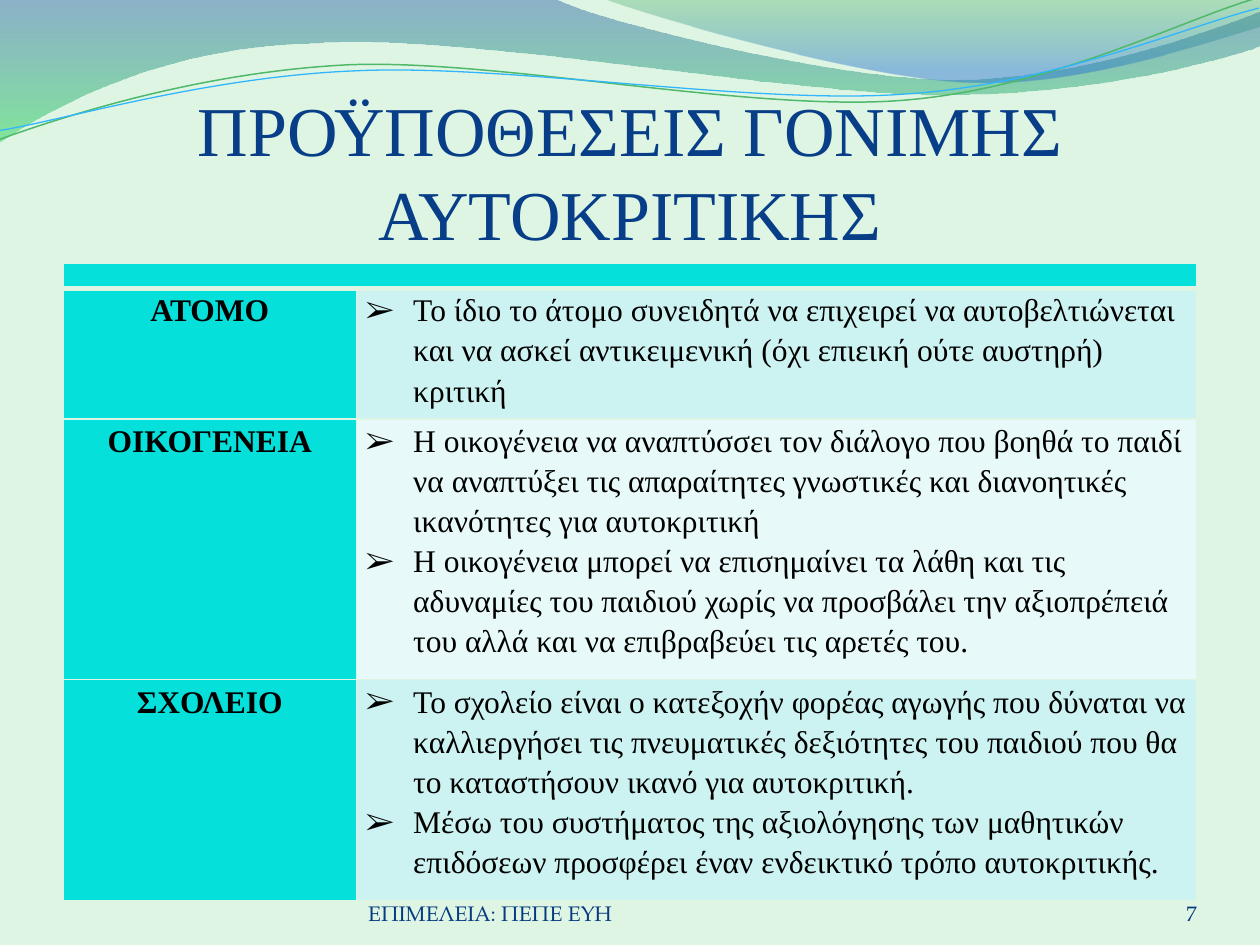
"""Build the slide on the conditions for fruitful self-criticism."""
from lxml.etree import SubElement
from pptx import Presentation
from pptx.dml.color import RGBColor
from pptx.enum.text import MSO_ANCHOR, PP_ALIGN
from pptx.oxml import parse_xml
from pptx.oxml.ns import nsdecls, qn
from pptx.util import Inches, Pt

MINT = RGBColor(0xDE, 0xF5, 0xE4)
TURQUOISE = RGBColor(0x05, 0xE0, 0xDB)
AQUA = RGBColor(0xCC, 0xF3, 0xF1)
PALE_AQUA = RGBColor(0xE7, 0xF9, 0xF8)
BLACK = RGBColor(0, 0, 0)
TITLE_BLUE = RGBColor(0x07, 0x3E, 0x87)
FOOTER_BLUE = RGBColor(0x07, 0x3B, 0x81)
DEEP_BLUE = RGBColor(0x29, 0x60, 0xA7)
BRIGHT_GREEN = RGBColor(0x35, 0xDA, 0x5E)
LEAF_GREEN = RGBColor(0x36, 0xA7, 0x52)
CLEAR_BLUE = RGBColor(0x24, 0x72, 0xD3)
LINE_GREEN = RGBColor(0x50, 0xB8, 0x6A)
LINE_BLUE = RGBColor(0x31, 0xB6, 0xFD)

SERIF = "Times New Roman"
FOOTER_FONT = "TeX Gyre Pagella"
TITLE = "ΠΡΟΫΠΟΘΕΣΕΙΣ ΓΟΝΙΜΗΣ ΑΥΤΟΚΡΙΤΙΚΗΣ"
FOOTER = "ΕΠΙΜΕΛΕΙΑ: ΠΕΠΕ ΕΥΗ"
PAGE_NUMBER = "7"

CONDITIONS = [
    ("ΑΤΟΜΟ", 0.96, [
        "Το ίδιο το άτομο συνειδητά να επιχειρεί να αυτοβελτιώνεται και να ασκεί "
        "αντικειμενική (όχι επιεική ούτε αυστηρή) κριτική",
    ]),
    ("ΟΙΚΟΓΕΝΕΙΑ", 1.95, [
        "Η οικογένεια να αναπτύσσει τον διάλογο που βοηθά το παιδί να αναπτύξει "
        "τις απαραίτητες γνωστικές και διανοητικές ικανότητες για αυτοκριτική",
        "Η οικογένεια μπορεί να επισημαίνει τα λάθη και τις αδυναμίες του παιδιού "
        "χωρίς να προσβάλει την αξιοπρέπειά του αλλά και να επιβραβεύει τις αρετές του.",
    ]),
    ("ΣΧΟΛΕΙΟ", 1.75, [
        "Το σχολείο είναι ο κατεξοχήν φορέας αγωγής που δύναται να καλλιεργήσει τις "
        "πνευματικές δεξιότητες του παιδιού που θα το καταστήσουν ικανό για αυτοκριτική.",
        "Μέσω του συστήματος της αξιολόγησης των μαθητικών επιδόσεων προσφέρει "
        "έναν ενδεικτικό τρόπο αυτοκριτικής.",
    ]),
]
HEADER_HEIGHT = 0.2
COLUMN_WIDTHS = (2.33, 6.67)

WAVES = [
    ((0, 0), [
        [(4.4, -0.01)],
        [(4.76, 0.17), (6.64, 0.63), (7.58, 0.63)],
        [(8.53, 0.63), (9.58, 0.26), (10, 0.09)],
        [(10.01, 0.36)],
        [(9.83, 0.44), (8.7, 0.76), (7.46, 0.75)],
        [(6.22, 0.75), (3.82, 0.28), (2.57, 0.34)],
        [(1.29, 0.36), (0.46, 0.83), (-0.01, 1.13)],
    ], [(0, DEEP_BLUE, 45), (1, BRIGHT_GREEN, 55)]),
    ((4.79, -0.01), [
        [(5.09, 0.11), (6.82, 0.62), (7.69, 0.65)],
        [(8.56, 0.69), (9.61, 0.32), (10, 0.21)],
        [(10, 0)],
    ], [(0, LEAF_GREEN, 30), (0.8, CLEAR_BLUE, 45)]),
]
RIBBONS = [
    ((-0.02, 0.87), [
        [(0.47, 0.72), (1.58, 0.41), (2.78, 0.41)],
        [(3.96, 0.42), (5.91, 0.93), (7.12, 0.9)],
        [(8.32, 0.87), (9.4, 0.36), (10, 0.22)],
    ], LINE_GREEN, 0.85),
    ((-0.02, 0.8), [
        [(0.46, 0.75), (1.64, 0.45), (2.83, 0.46)],
        [(4.03, 0.46), (5.96, 0.88), (7.16, 0.85)],
        [(8.35, 0.83), (9.42, 0.42), (10.01, 0.3)],
    ], LINE_BLUE, 0.75),
]
RIBBON_TILT = 357.3


def add_outline(slide, start, segments, close):
    builder = slide.shapes.build_freeform(*map(Inches, start))
    builder.add_line_segments(
        [(Inches(x), Inches(y)) for segment in segments for x, y in segment], close=close)
    outline = builder.convert_to_shape()
    outline.shadow.inherit = False
    steps = iter(list(outline.element.iter(qn("a:lnTo"))))
    for segment in segments:
        first, *others = [next(steps) for _ in segment]
        if others:
            first.tag = qn("a:cubicBezTo")
            for step in others:
                first.append(step[0])
                step.getparent().remove(step)
    return outline


def add_wave(slide, start, segments, stops):
    wave = add_outline(slide, start, segments, True)
    wave.line.fill.background()
    wave.fill.gradient()
    wave.fill.gradient_angle = 270
    for stop, (position, color, _) in zip(wave.fill.gradient_stops, stops):
        stop.position = position
        stop.color.rgb = color
    tints = wave.element.spPr.iter(qn("a:srgbClr"))
    for tint, (_, _, opacity) in zip(tints, stops):
        SubElement(tint, qn("a:alpha"), val=str(opacity * 1000))


def add_ribbon(slide, start, segments, color, width):
    ribbon = add_outline(slide, start, segments, False)
    ribbon.rotation = RIBBON_TILT
    ribbon.fill.background()
    ribbon.line.color.rgb = color
    ribbon.line.width = Pt(width)


def style(paragraph, size, name, color, align=PP_ALIGN.LEFT, bold=False):
    paragraph.alignment = align
    font = paragraph.font
    font.size, font.name, font.bold = Pt(size), name, bold
    font.color.rgb = color


def add_label(slide, text, box, size, name, color, align, top_inset=0):
    frame = slide.shapes.add_textbox(*map(Inches, box)).text_frame
    frame.word_wrap = True
    frame.vertical_anchor = MSO_ANCHOR.BOTTOM
    frame.margin_left = frame.margin_right = frame.margin_bottom = 0
    frame.margin_top = Inches(top_inset)
    frame.text = text
    style(frame.paragraphs[0], size, name, color, align)


def dress_cell(cell, color, top=1, bottom=1):
    cell.margin_left = cell.margin_right = Inches(0.07)
    cell.margin_top = cell.margin_bottom = 0
    cell.fill.solid()
    cell.fill.fore_color.rgb = color
    sides = (("L", 1), ("R", 1), ("T", top), ("B", bottom))
    for place, (side, width) in enumerate(sides):
        cell._tc.tcPr.insert(place, parse_xml(
            f'<a:ln{side} {nsdecls("a")} w="{Pt(width)}"><a:solidFill>'
            f'<a:srgbClr val="{MINT}"/></a:solidFill></a:ln{side}>'))


def write_cell(cell, lines, bulleted):
    cell.text = "\n".join(lines)
    for paragraph in cell.text_frame.paragraphs:
        if bulleted:
            properties = paragraph._p.get_or_add_pPr()
            properties.set("marL", str(Inches(0.38)))
            properties.set("indent", str(-Inches(0.38)))
            SubElement(properties, qn("a:buFont"), typeface=SERIF)
            SubElement(properties, qn("a:buChar"), char="➢")
        paragraph.line_spacing = 1.15
        style(paragraph, 18, SERIF, BLACK,
              PP_ALIGN.LEFT if bulleted else PP_ALIGN.CENTER, not bulleted)


def add_conditions(slide):
    heights = [HEADER_HEIGHT] + [height for _, height, _ in CONDITIONS]
    table = slide.shapes.add_table(
        len(heights), 2, Inches(0.5), Inches(2.09), Inches(9), Inches(sum(heights))).table
    table.first_row = table.horz_banding = False
    for column, width in zip(table.columns, COLUMN_WIDTHS):
        column.width = Inches(width)
    for row, height in zip(table.rows, heights):
        row.height = Inches(height)
    for cell in table.rows[0].cells:
        dress_cell(cell, TURQUOISE, bottom=3)
        SubElement(cell.text_frame.paragraphs[0]._p, qn("a:endParaRPr"), sz="800")
    table.cell(0, 0).merge(table.cell(0, 1))
    for index, (setting, _, points) in enumerate(CONDITIONS, 1):
        top = 3 if index == 1 else 1
        heading, details = table.rows[index].cells
        dress_cell(heading, TURQUOISE, top)
        dress_cell(details, AQUA if index % 2 else PALE_AQUA, top)
        write_cell(heading, [setting], False)
        write_cell(details, points, True)


def main():
    deck = Presentation()
    deck.slide_width, deck.slide_height = Inches(10), Inches(7.5)
    slide = deck.slides.add_slide(deck.slide_layouts[6])
    slide.background.fill.solid()
    slide.background.fill.fore_color.rgb = MINT
    for wave in WAVES:
        add_wave(slide, *wave)
    for ribbon in RIBBONS:
        add_ribbon(slide, *ribbon)
    add_label(slide, TITLE, (0.5, 0.77, 9, 1.25), 40, SERIF, TITLE_BLUE, PP_ALIGN.CENTER, 0.05)
    add_conditions(slide)
    footer_look = (12, FOOTER_FONT, FOOTER_BLUE)
    add_label(slide, FOOTER, (2.92, 6.95, 3.67, 0.4), *footer_look, PP_ALIGN.LEFT)
    add_label(slide, PAGE_NUMBER, (8.67, 6.95, 0.83, 0.4), *footer_look, PP_ALIGN.RIGHT)
    deck.save("out.pptx")


if __name__ == "__main__":
    main()
